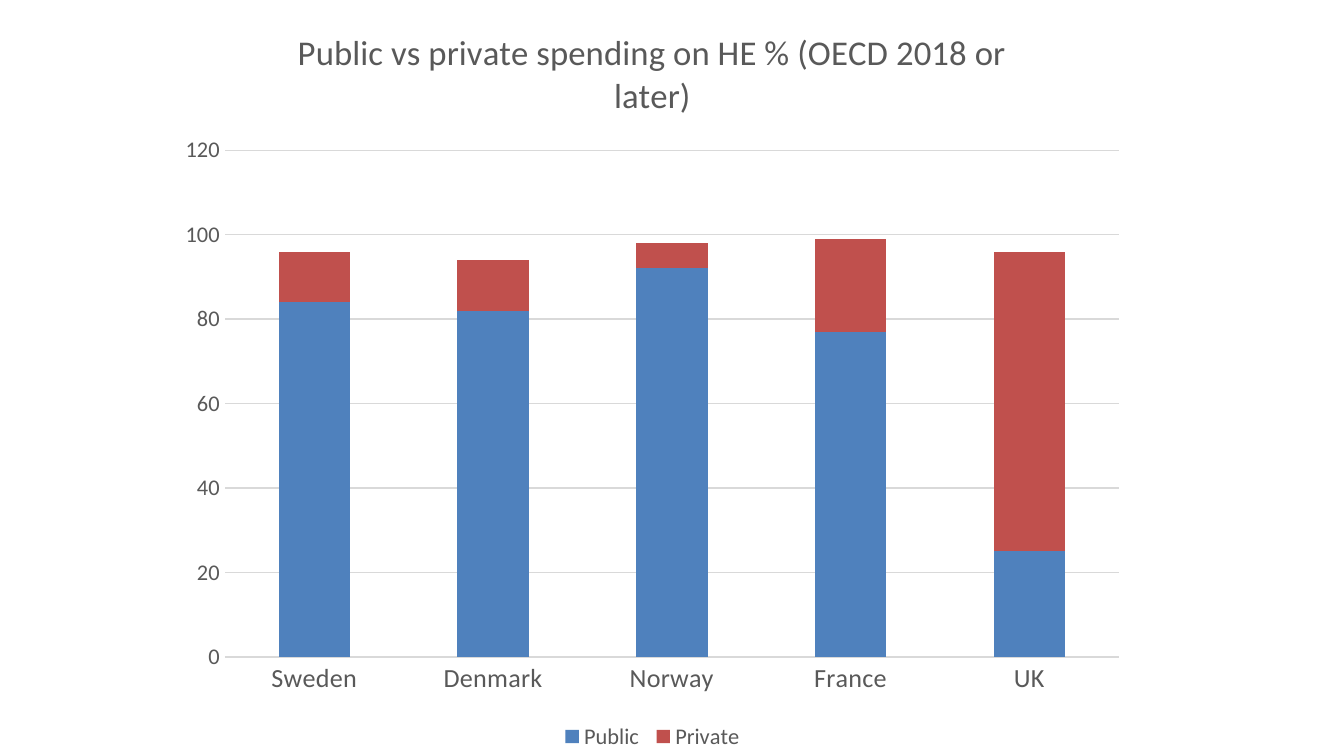
"""Build a slide with a stacked column chart of public and private spending on higher education."""
from dataclasses import dataclass

import lxml.etree
import pptx
import pptx.chart.data
import pptx.dml.color
import pptx.enum.chart
import pptx.oxml.ns
import pptx.util


@dataclass(frozen=True)
class Theme:
    font: str = "Calibri"
    text: str = "595959"
    grid: str = "D9D9D9"
    series: tuple = ("4F81BD", "C0504D")
    title_size: float = 18.6
    category_size: float = 14
    label_size: float = 12
    line_width: float = 0.75


class SlideBuilder:
    def __init__(self, slide, theme):
        self.slide = slide
        self.theme = theme

    def style_font(self, font, size):
        font.name = self.theme.font
        font.size = pptx.util.Pt(size)
        font.bold = False
        font.color.rgb = pptx.dml.color.RGBColor.from_string(self.theme.text)

    def style_line(self, line):
        line.color.rgb = pptx.dml.color.RGBColor.from_string(self.theme.grid)
        line.width = pptx.util.Pt(self.theme.line_width)

    def place(self, parent, index, position, target=None):
        qn = pptx.oxml.ns.qn
        for old in parent.findall(qn("c:layout")):
            parent.remove(old)
        layout = lxml.etree.Element(qn("c:layout"))
        manual = lxml.etree.SubElement(layout, qn("c:manualLayout"))
        settings = [("layoutTarget", target)] if target else []
        settings += [("xMode", "edge"), ("yMode", "edge")]
        settings += zip("xywh", position)
        for name, value in settings:
            lxml.etree.SubElement(manual, qn(f"c:{name}"), val=str(value))
        parent.insert(index, layout)

    def add_title(self, chart, text):
        chart.has_title = True
        chart.chart_title.include_in_layout = False
        p = chart.chart_title.text_frame.paragraphs[0]
        r = p.add_run()
        r.text = text
        self.style_font(r.font, self.theme.title_size)

    def add_legend(self, chart, position):
        chart.has_legend = True
        legend = chart.legend
        legend.position = pptx.enum.chart.XL_LEGEND_POSITION.BOTTOM
        legend.include_in_layout = False
        self.style_font(legend.font, self.theme.label_size)
        self.place(legend._element, 1, position)

    def style_axes(self, chart):
        sizes = (self.theme.category_size, self.theme.label_size)
        for axis, size in zip((chart.category_axis, chart.value_axis), sizes):
            axis.major_tick_mark = pptx.enum.chart.XL_TICK_MARK.NONE
            axis.minor_tick_mark = pptx.enum.chart.XL_TICK_MARK.NONE
            self.style_font(axis.tick_labels.font, size)
        self.style_line(chart.category_axis.format.line)
        values = chart.value_axis
        values.minimum_scale, values.maximum_scale, values.major_unit = 0, 120, 20
        values.format.line.fill.background()
        values.has_major_gridlines = True
        self.style_line(values.major_gridlines.format.line)

    def add_stacked_columns(self, box, title, categories, series):
        data = pptx.chart.data.CategoryChartData()
        data.categories = categories
        for name, values in series.items():
            data.add_series(name, values)
        kind = pptx.enum.chart.XL_CHART_TYPE.COLUMN_STACKED
        chart = self.slide.shapes.add_chart(kind, *map(pptx.util.Cm, box), data).chart
        chart.font.name = self.theme.font
        plot = chart.plots[0]
        plot.gap_width, plot.overlap = 150, 100
        plot.vary_by_categories = False
        for s, color in zip(plot.series, self.theme.series):
            s.format.fill.solid()
            s.format.fill.fore_color.rgb = pptx.dml.color.RGBColor.from_string(color)
        self.add_title(chart, title)
        self.style_axes(chart)
        self.add_legend(chart, (0.4, 0.95, 0.2, 0.05))
        plot_area = plot._element.getparent()
        self.place(plot_area, 0, (0.06, 0.2, 0.92, 0.67), "inner")


def main():
    prs = pptx.Presentation()
    prs.slide_width = pptx.util.Cm(25.4)
    prs.slide_height = pptx.util.Cm(14.29)
    builder = SlideBuilder(prs.slides.add_slide(prs.slide_layouts[6]), Theme())
    builder.add_stacked_columns(
        (3.15, -0.02, 18.36, 14.3),
        "Public vs private spending on HE % (OECD 2018 or later)",
        ("Sweden", "Denmark", "Norway", "France", "UK"),
        {"Public": (84, 82, 92, 77, 25), "Private": (12, 12, 6, 22, 71)},
    )
    prs.save("out.pptx")


if __name__ == "__main__":
    main()
